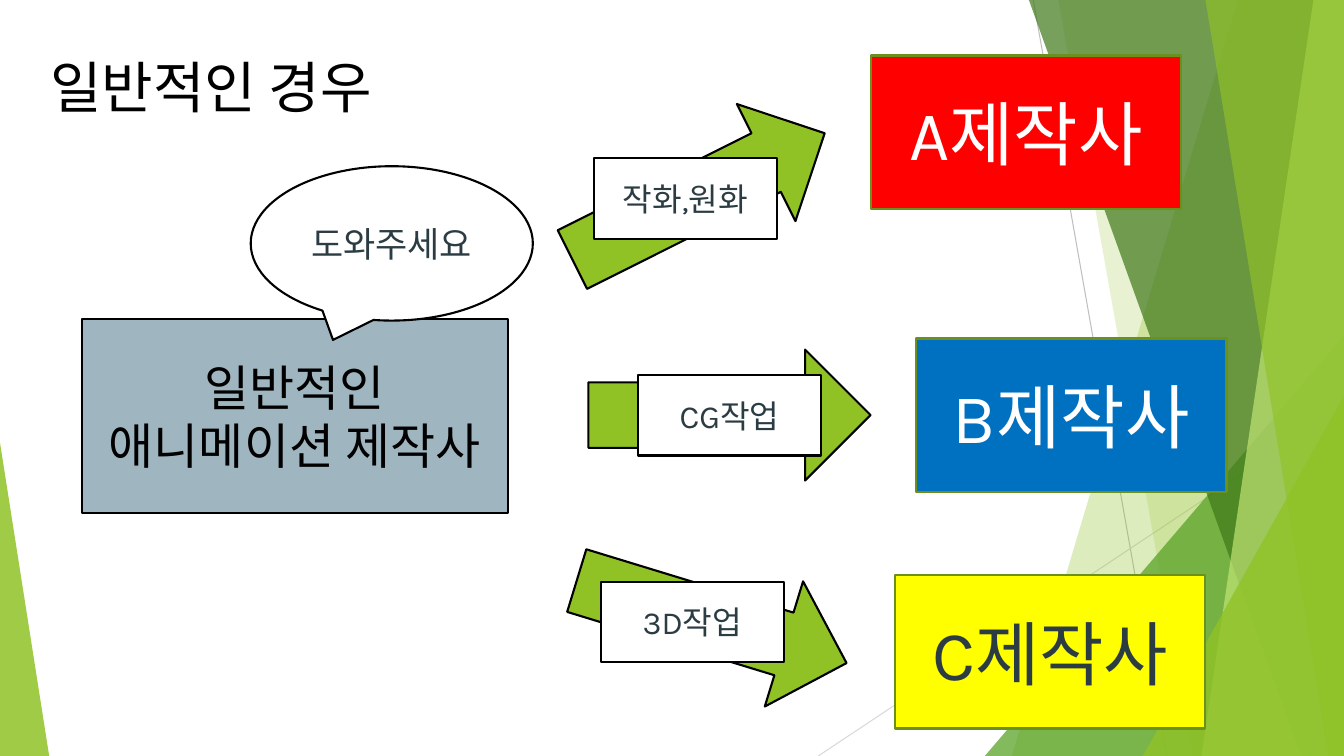
"""Build the slide on how a studio outsources work to three production companies."""
from typing import NamedTuple

from lxml import etree
from pptx import Presentation
from pptx import util as u
from pptx.dml.color import RGBColor
from pptx.enum import shapes, text
from pptx.oxml.ns import qn

WHITE = RGBColor(0xFF, 0xFF, 0xFF)
BLACK = RGBColor(0x00, 0x00, 0x00)
SLATE = RGBColor(0x2C, 0x3C, 0x43)
STEEL = RGBColor(0x9F, 0xB6, 0xC0)
RED = RGBColor(0xFF, 0x00, 0x00)
BLUE = RGBColor(0x00, 0x70, 0xC0)
YELLOW = RGBColor(0xFF, 0xFF, 0x00)
LIME = RGBColor(0x90, 0xC2, 0x26)
PALE_LIME = RGBColor(0xC0, 0xE4, 0x74)
GREEN = RGBColor(0x54, 0xA0, 0x21)
DARK_GREEN = RGBColor(0x3F, 0x78, 0x19)
OLIVE = RGBColor(0x6B, 0x90, 0x1C)
GRAY = RGBColor(0xBF, 0xBF, 0xBF)
LIGHT_GRAY = RGBColor(0xD9, 0xD9, 0xD9)

LATIN, HANGUL = "Karla", "Noto Sans CJK KR"
SLIDE_W, SLIDE_H = 33.87, 19.05
COMPANY_SIZE = (7.82, 3.86)
ARROW_SIZE = (7.11, 3.3)
TASK_SIZE = (4.62, 2.03)


class Ray(NamedTuple):
    """A thin line between two points."""
    start: tuple[float, float]
    end: tuple[float, float]
    color: RGBColor


class Facet(NamedTuple):
    """A band from its slanted left edge to the right slide edge."""
    top_x: float
    bottom_x: float
    color: RGBColor
    opacity: int


class Peak(NamedTuple):
    """A triangle standing on the bottom slide edge."""
    left: float
    top: float
    width: float
    lean: float
    color: RGBColor
    opacity: int


class Company(NamedTuple):
    """A production company that takes on work."""
    name: str
    left: float
    top: float
    fill: RGBColor
    color: RGBColor


class Task(NamedTuple):
    """A labelled arrow that hands work to a company."""
    label: str
    arrow_at: tuple[float, float]
    label_at: tuple[float, float]
    angle: float


RAYS = [
    Ray((26.04, 0), (29.41, SLIDE_H), GRAY),
    Ray((SLIDE_W, 10.24), (20.62, SLIDE_H), LIGHT_GRAY),
]
DECOR = [
    Facet(31.19, 25.5, LIME, 30),
    Facet(26.67, 30.05, LIME, 20),
    Peak(24.82, 8.46, 9.05, 1, GREEN, 72),
    Facet(25.93, 32.79, DARK_GREEN, 70),
    Facet(33.1, 30.28, PALE_LIME, 70),
    Facet(30.38, 33.48, LIME, 65),
    Peak(28.8, 9.98, 5.07, 1, LIME, 80),
    Peak(0, 11.15, 1.24, 0, LIME, 85),
]
COMPANIES = [
    Company("A제작사", 21.95, 1.4, RED, WHITE),
    Company("B제작사", 23.09, 8.53, BLUE, WHITE),
    Company("C제작사", 22.56, 14.5, YELLOW, SLATE),
]
TASKS = [
    Task("3D작업", (14.38, 14.02), (15.14, 14.66), 17),
    Task("CG작업", (14.83, 8.81), (16.08, 9.45), 0),
    Task("작화,원화", (14.05, 3.3), (14.96, 3.99), 333.4),
]


def write(frame, words: str, *, size: float, color: RGBColor, font: str = LATIN,
          align=text.PP_ALIGN.CENTER, anchor=text.MSO_ANCHOR.MIDDLE) -> None:
    """Put one formatted paragraph into a text frame."""
    frame.word_wrap = True
    frame.vertical_anchor = anchor
    paragraph = frame.paragraphs[0]
    paragraph.alignment = align
    run = paragraph.add_run()
    run.text = words
    run.font.size = u.Pt(size)
    run.font.color.rgb = color
    run.font.name = font
    etree.SubElement(run.font._element, qn("a:ea"), typeface=HANGUL)


def add_box(parent, kind, at: tuple[float, float], size: tuple[float, float],
            fill: RGBColor, outline: RGBColor = BLACK):
    """Add a filled and outlined preset shape."""
    box = parent.add_shape(kind, *map(u.Cm, at + size))
    box.shadow.inherit = False
    box.fill.solid()
    box.fill.fore_color.rgb = fill
    box.line.color.rgb = outline
    box.line.width = u.Pt(1.5)
    return box


def draw_ray(parent, ray: Ray) -> None:
    """Draw a background line."""
    line = parent.add_connector(shapes.MSO_CONNECTOR.STRAIGHT, *map(u.Cm, ray.start + ray.end))
    line.line.color.rgb = ray.color
    line.line.width = u.Pt(0.75)
    etree.SubElement(line._element.spPr, qn("a:effectLst"))


def draw_decor(parent, piece: Facet | Peak) -> None:
    """Draw a translucent background piece."""
    if isinstance(piece, Facet):
        corners = [(SLIDE_W, 0), (SLIDE_W, SLIDE_H), (piece.bottom_x, SLIDE_H)]
        outline = parent.build_freeform(u.Cm(piece.top_x), 0)
        outline.add_line_segments([(u.Cm(x), u.Cm(y)) for x, y in corners])
        shape = outline.convert_to_shape()
    else:
        shape = parent.add_shape(
            shapes.MSO_SHAPE.ISOSCELES_TRIANGLE, u.Cm(piece.left), u.Cm(piece.top),
            u.Cm(piece.width), u.Cm(SLIDE_H - piece.top))
        shape.adjustments[0] = piece.lean
    shape.shadow.inherit = False
    shape.line.fill.background()
    shape.fill.solid()
    shape.fill.fore_color.rgb = piece.color
    tint = shape._element.spPr.find(qn("a:solidFill"))[0]
    etree.SubElement(tint, qn("a:alpha"), val=str(piece.opacity * 1000))


def draw_company(parent, company: Company) -> None:
    """Draw a company box."""
    box = add_box(parent, shapes.MSO_SHAPE.RECTANGLE, (company.left, company.top),
                  COMPANY_SIZE, company.fill, OLIVE)
    write(box.text_frame, company.name, size=50, color=company.color)


def draw_task(parent, task: Task) -> None:
    """Draw an arrow grouped with its label."""
    group = parent.add_group_shape().shapes
    arrow = add_box(group, shapes.MSO_SHAPE.RIGHT_ARROW, task.arrow_at, ARROW_SIZE, LIME)
    arrow.rotation = task.angle
    label = add_box(group, shapes.MSO_SHAPE.RECTANGLE, task.label_at, TASK_SIZE, WHITE)
    write(label.text_frame, task.label, size=23, color=SLATE)


def draw_title(title) -> None:
    """Place and format the slide title."""
    title.left, title.top, title.width, title.height = map(u.Cm, (1.27, 1.19, 12.27, 1.96))
    frame = title.text_frame
    frame.auto_size = text.MSO_AUTO_SIZE.NONE
    frame.margin_left = 0
    write(frame, "일반적인 경우", size=40, color=BLACK, font=HANGUL,
          align=text.PP_ALIGN.LEFT, anchor=text.MSO_ANCHOR.TOP)


def main() -> None:
    """Build and save the slide."""
    deck = Presentation()
    deck.slide_width, deck.slide_height = u.Cm(SLIDE_W), u.Cm(SLIDE_H)
    slide = deck.slides.add_slide(deck.slide_layouts[5])
    canvas = slide.shapes
    for ray in RAYS:
        draw_ray(canvas, ray)
    for piece in DECOR:
        draw_decor(canvas, piece)
    draw_title(canvas.title)
    studio = add_box(canvas, shapes.MSO_SHAPE.RECTANGLE, (2.06, 8.03), (10.74, 4.9), STEEL)
    write(studio.text_frame, "일반적인 애니메이션 제작사", size=35, color=BLACK, font=HANGUL)
    for company in COMPANIES:
        draw_company(canvas, company)
    plea = add_box(canvas, shapes.MSO_SHAPE.OVAL_CALLOUT, (6.32, 4.19), (7.11, 3.89), WHITE)
    write(plea.text_frame, "도와주세요", size=25, color=SLATE)
    for task in TASKS:
        draw_task(canvas, task)
    deck.save("out.pptx")


if __name__ == "__main__":
    main()
